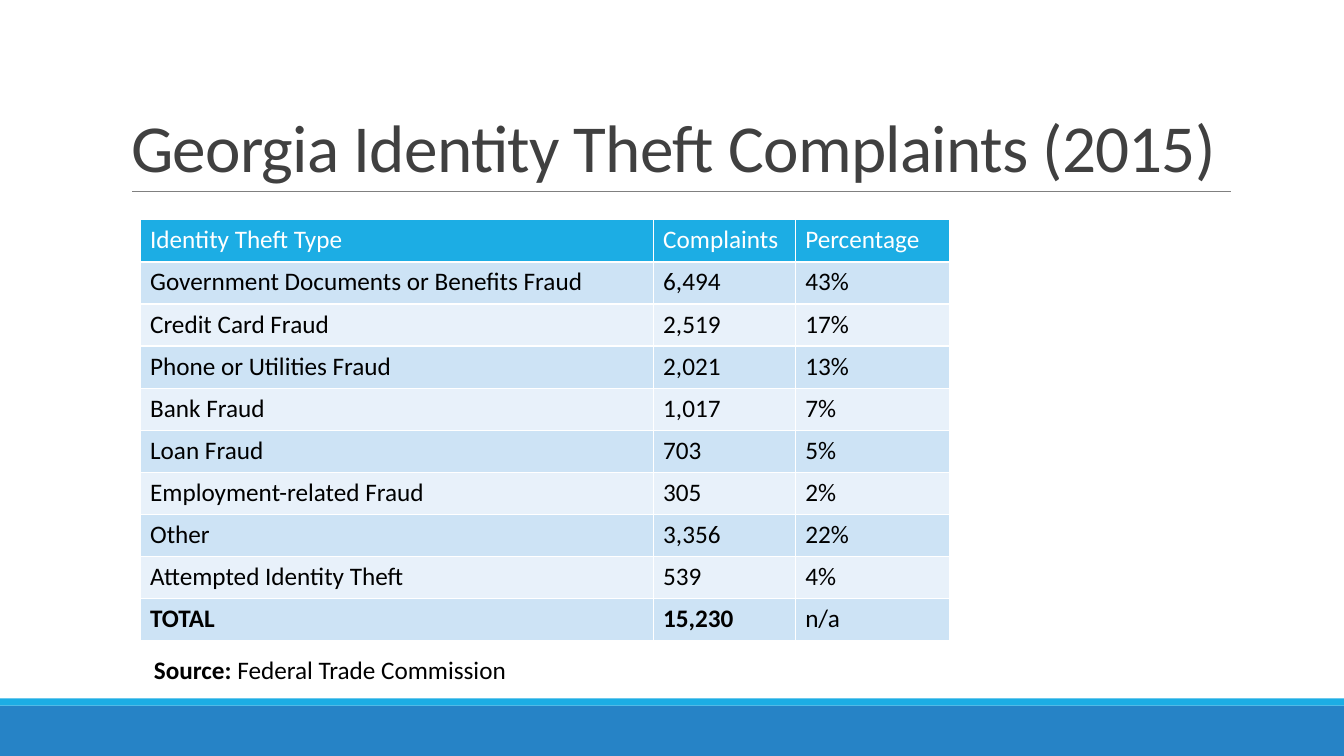
from pptx import Presentation
from pptx import util as u
from pptx.dml.color import RGBColor
from pptx.enum import shapes, text
from pptx.oxml.ns import qn
from lxml import etree


def rgb(value):
    return RGBColor.from_string(value)


def add_run(p, words, size=18, color="000000", bold=False, spacing=None):
    r = p.add_run()
    r.text = words
    r.font.name = "Calibri"
    r.font.size = u.Pt(size)
    r.font.bold = bold
    r.font.color.rgb = rgb(color)
    if spacing is not None:
        r.font._element.set("spc", str(int(spacing * 100)))


prs = Presentation()
prs.slide_width, prs.slide_height = u.Cm(33.87), u.Cm(19.05)
s = prs.slides.add_slide(prs.slide_layouts[5])

# Bottom bands
for top, height, color in [(17.78, 1.27, "2683C6"), (17.6, 0.18, "1CADE4")]:
    sp = s.shapes.add_shape(shapes.MSO_SHAPE.RECTANGLE, 0, u.Cm(top),
                            prs.slide_width, u.Cm(height))
    sp.shadow.inherit = False
    sp.fill.solid()
    sp.fill.fore_color.rgb = rgb(color)
    sp.line.fill.background()

# Rule under the title
rule = s.shapes.add_connector(shapes.MSO_CONNECTOR.STRAIGHT,
                              u.Cm(3.33), u.Cm(4.83), u.Cm(31.01), u.Cm(4.83))
rule.line.color.rgb = rgb("808080")
rule.line.width = u.Pt(0.5)
etree.SubElement(rule._element.spPr, qn("a:effectLst"))

# Title
title = s.shapes.title
title.left, title.top = u.Cm(3.05), u.Cm(0.79)
title.width, title.height = u.Cm(27.94), u.Cm(4.04)
tf = title.text_frame
tf.word_wrap = True
tf.auto_size = text.MSO_AUTO_SIZE.NONE
tf.vertical_anchor = text.MSO_ANCHOR.BOTTOM
p = tf.paragraphs[0]
p.alignment = text.PP_ALIGN.LEFT
p.line_spacing = 0.85
add_run(p, "Georgia Identity Theft Complaints (2015)",
        size=48, color="404040", spacing=-0.5)

# Complaints table
rows = [
    ("Identity Theft Type", "Complaints", "Percentage"),
    ("Government Documents or Benefits Fraud", "6,494", "43%"),
    ("Credit Card Fraud", "2,519", "17%"),
    ("Phone or Utilities Fraud", "2,021", "13%"),
    ("Bank Fraud", "1,017", "7%"),
    ("Loan Fraud", "703", "5%"),
    ("Employment-related Fraud", "305", "2%"),
    ("Other", "3,356", "22%"),
    ("Attempted Identity Theft", "539", "4%"),
    ("TOTAL", "15,230", "n/a"),
]
widths = [12.93, 3.58, 3.89]
row_height = 1.06
table = s.shapes.add_table(len(rows), len(widths), u.Cm(3.53), u.Cm(5.54),
                           u.Cm(sum(widths)), u.Cm(row_height * len(rows))).table
for column, width in zip(table.columns, widths):
    column.width = u.Cm(width)
for i, values in enumerate(rows):
    table.rows[i].height = u.Cm(row_height)
    header = i == 0
    fill = "1CADE4" if header else ("E8F1FA", "CDE3F5")[i % 2]
    for j, value in enumerate(values):
        cell = table.cell(i, j)
        cell.fill.solid()
        cell.fill.fore_color.rgb = rgb(fill)
        add_run(cell.text_frame.paragraphs[0], value,
                color="FFFFFF" if header else "000000",
                bold=values[0] == "TOTAL" and j < 2)

# Source line
tf = s.shapes.add_textbox(u.Cm(3.63), u.Cm(16.36), u.Cm(13.39), u.Cm(1.03)).text_frame
tf.word_wrap = True
p = tf.paragraphs[0]
add_run(p, "Source: ", bold=True)
add_run(p, "Federal Trade Commission")

prs.save("out.pptx")
